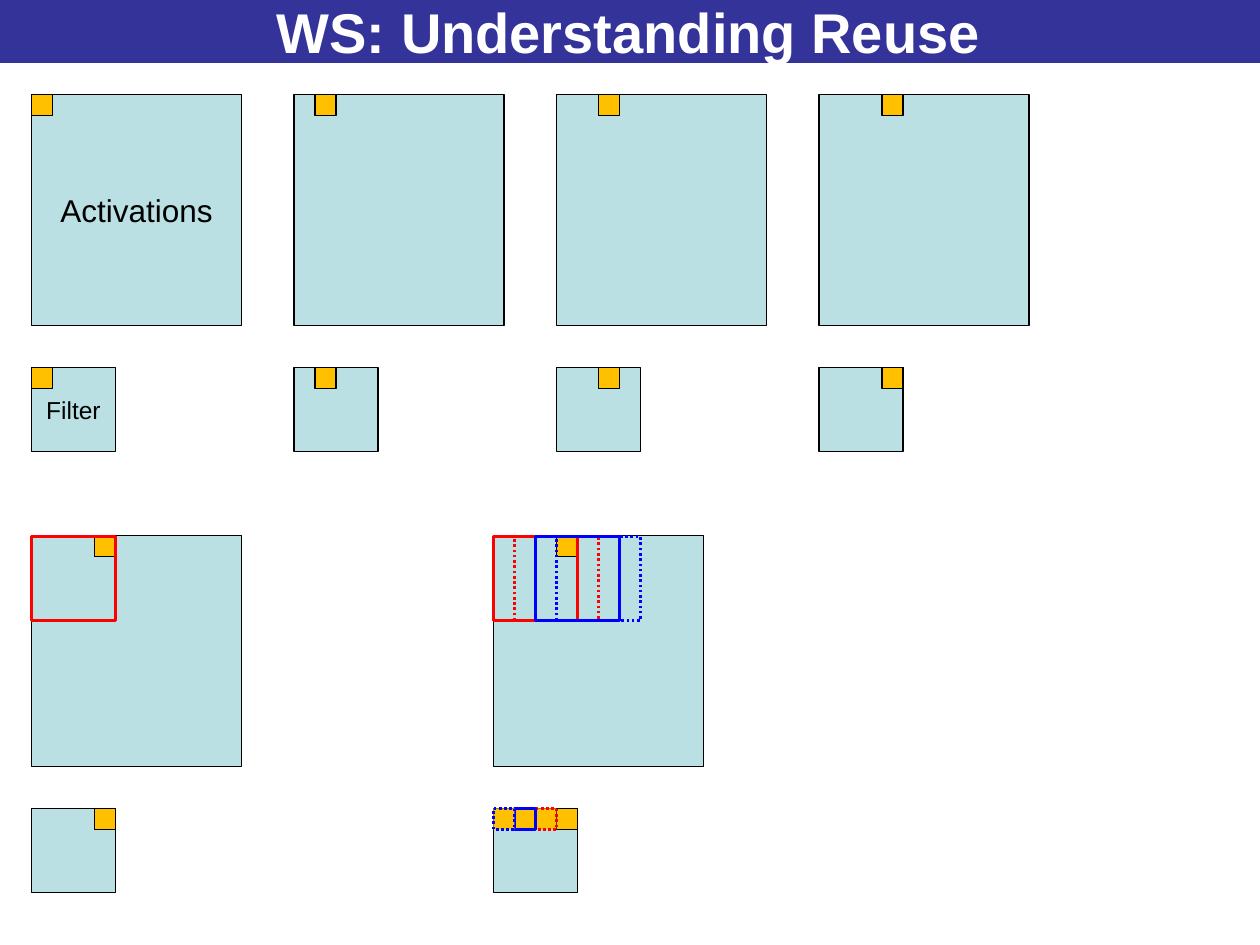
from dataclasses import dataclass

from pptx import Presentation
from pptx.dml.color import RGBColor
from pptx.enum.dml import MSO_LINE
from pptx.enum.shapes import MSO_SHAPE
from pptx.enum.text import MSO_ANCHOR, PP_ALIGN
from pptx.util import Inches, Pt

NAVY = RGBColor(0x33, 0x33, 0x99)
WHITE = RGBColor(0xFF, 0xFF, 0xFF)
BLACK = RGBColor(0x00, 0x00, 0x00)
PALE_TEAL = RGBColor(0xBB, 0xE0, 0xE3)
AMBER = RGBColor(0xFF, 0xC0, 0x00)
RED = RGBColor(0xFF, 0x00, 0x00)
BLUE = RGBColor(0x00, 0x00, 0xFF)

# Everything sits on a grid of one-element cells
CELL = 1 / 6
FILTER_SIZE = 4 * CELL
ACTIVATIONS_WIDTH = 10 * CELL
ACTIVATIONS_HEIGHT = 11 * CELL
FILTER_DROP = 13 * CELL
WINDOW_DROP = 0.01


@dataclass(frozen=True)
class Step:
    """One convolution step; element is the column of the active cell."""
    left: float
    top: float
    element: int
    activations_label: str = ""
    filter_label: str = ""


@dataclass(frozen=True)
class Mark:
    """An outline placed a number of cells right of its step's left edge."""
    column: int
    color: RGBColor
    dotted: bool = False


LEFT, TOP_ROW, BOTTOM_ROW = 0.25, 0.75, 4.25
STEP_PITCH = 12.5 * CELL

FIRST_STEPS = [
    Step(LEFT, TOP_ROW, 0, "Activations", "Filter"),
    *(Step(LEFT + i * STEP_PITCH, TOP_ROW, i) for i in range(1, 4)),
]
LAST_STEP = Step(LEFT, BOTTOM_ROW, 3)
REUSE_STEP = Step(LEFT + 22 * CELL, BOTTOM_ROW, 3)

LAST_WINDOWS = [Mark(0, RED)]
REUSE_WINDOWS = [Mark(0, RED), Mark(1, RED, True), Mark(3, BLUE, True), Mark(2, BLUE)]
REUSED_WEIGHTS = [Mark(2, RED, True), Mark(1, BLUE), Mark(0, BLUE, True)]


def add_text(shape, text: str, *, size: float, color: RGBColor = BLACK,
             bold: bool = False) -> None:
    frame = shape.text_frame
    frame.word_wrap = True
    frame.vertical_anchor = MSO_ANCHOR.MIDDLE
    paragraph = frame.paragraphs[0]
    paragraph.alignment = PP_ALIGN.CENTER
    run = paragraph.add_run()
    run.text = text
    run.font.name = "Arial"
    run.font.size = Pt(size)
    run.font.bold = bold
    run.font.color.rgb = color


def add_box(slide, left: float, top: float, width: float, height: float, *,
            fill: RGBColor | None = None, line: RGBColor | None = BLACK,
            line_width: float = 0.75, dotted: bool = False):
    shape = slide.shapes.add_shape(
        MSO_SHAPE.RECTANGLE, Inches(left), Inches(top), Inches(width), Inches(height))
    shape.shadow.inherit = False
    if fill is None:
        shape.fill.background()
    else:
        shape.fill.solid()
        shape.fill.fore_color.rgb = fill
    if line is None:
        shape.line.fill.background()
    else:
        shape.line.color.rgb = line
        shape.line.width = Pt(line_width)
        if dotted:
            shape.line.dash_style = MSO_LINE.ROUND_DOT
    return shape


def add_step(slide, step: Step) -> None:
    filter_top = step.top + FILTER_DROP
    activations = add_box(slide, step.left, step.top, ACTIVATIONS_WIDTH,
                          ACTIVATIONS_HEIGHT, fill=PALE_TEAL)
    weights = add_box(slide, step.left, filter_top, FILTER_SIZE, FILTER_SIZE,
                      fill=PALE_TEAL)
    if step.activations_label:
        add_text(activations, step.activations_label, size=18)
    if step.filter_label:
        add_text(weights, step.filter_label, size=14)
    for top in (step.top, filter_top):
        add_box(slide, step.left + step.element * CELL, top, CELL, CELL, fill=AMBER)


def add_marks(slide, marks: list[Mark], left: float, top: float, size: float,
              fill: RGBColor | None = None) -> None:
    for mark in marks:
        add_box(slide, left + mark.column * CELL, top, size, size, fill=fill,
                line=mark.color, line_width=1.5, dotted=mark.dotted)


def main() -> None:
    presentation = Presentation()
    presentation.slide_width = Inches(10)
    presentation.slide_height = Inches(7.5)
    slide = presentation.slides.add_slide(presentation.slide_layouts[6])

    # Title band
    title = add_box(slide, -0.02, 0, 10.02, 0.5, fill=NAVY, line=None)
    add_text(title, "WS: Understanding Reuse", size=32, color=WHITE, bold=True)

    # Top row: the active element moves one column per step
    for step in FIRST_STEPS:
        add_step(slide, step)

    # Bottom row: filter windows over the activations, then the reused weights
    for step, windows in ((LAST_STEP, LAST_WINDOWS), (REUSE_STEP, REUSE_WINDOWS)):
        add_step(slide, step)
        add_marks(slide, windows, step.left, step.top + WINDOW_DROP, FILTER_SIZE)
    add_marks(slide, REUSED_WEIGHTS, REUSE_STEP.left, REUSE_STEP.top + FILTER_DROP,
              CELL, fill=AMBER)

    presentation.save("out.pptx")


if __name__ == "__main__":
    main()
